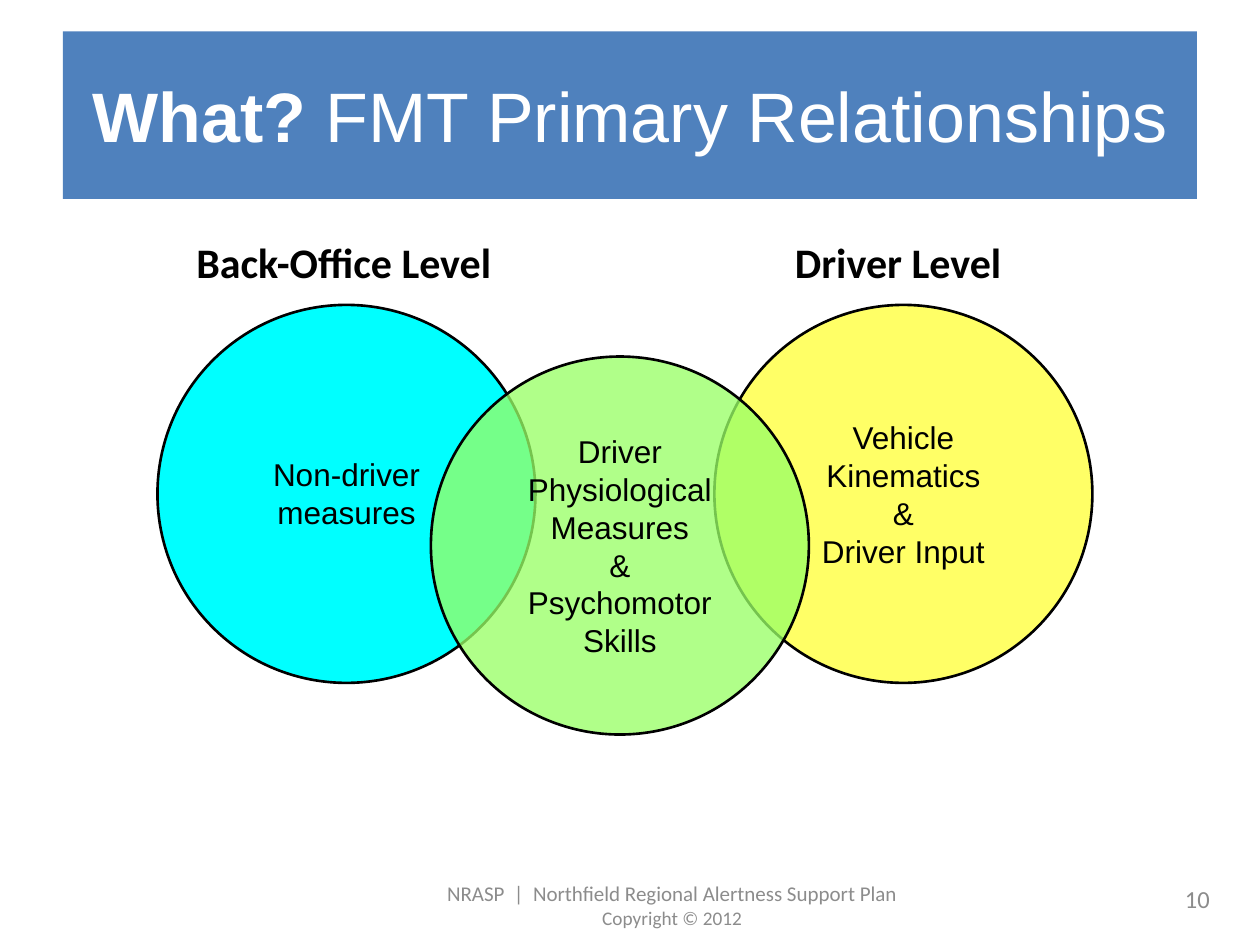
from dataclasses import dataclass

from lxml import etree
from pptx import Presentation
from pptx.dml.color import RGBColor
from pptx.enum.shapes import MSO_SHAPE
from pptx.enum.text import MSO_ANCHOR, PP_ALIGN
from pptx.oxml.ns import qn
from pptx.util import Inches, Pt

RECTANGLE = MSO_SHAPE.RECTANGLE
CIRCLE = MSO_SHAPE.FLOWCHART_CONNECTOR
LEFT, CENTER, RIGHT = PP_ALIGN.LEFT, PP_ALIGN.CENTER, PP_ALIGN.RIGHT
TOP, MIDDLE = MSO_ANCHOR.TOP, MSO_ANCHOR.MIDDLE


@dataclass(frozen=True)
class Theme:
    heading_font: str = "Arial"
    body_font: str = "Calibri"
    banner: str = "4F81BD"
    white: str = "FFFFFF"
    black: str = "000000"
    gray: str = "8C8C8C"
    cyan: str = "00FFFF"
    yellow: str = "FFFF66"
    green: str = "99FF66"
    title_size: int = 40
    label_size: int = 24
    circle_size: int = 18
    number_size: int = 14
    footer_size: int = 12
    copyright_size: int = 11


THEME = Theme()
CIRCLE_DIAMETER = 3


def format_run(run, font, size, color, bold=False):
    run.font.name = font
    run.font.size = Pt(size)
    run.font.bold = bold
    run.font.color.rgb = RGBColor.from_string(color)


def set_text(shape, text, font, size, color, align=CENTER, anchor=MIDDLE, bold=False):
    text_frame = shape.text_frame
    text_frame.word_wrap = True
    text_frame.vertical_anchor = anchor
    text_frame.text = text
    for paragraph in text_frame.paragraphs:
        paragraph.alignment = align
        for run in paragraph.runs:
            format_run(run, font, size, color, bold)


def add_text(slide, box, text, font, size, color, **options):
    shape = slide.shapes.add_textbox(*map(Inches, box))
    set_text(shape, text, font, size, color, **options)
    return shape


def add_filled_shape(slide, kind, box, color):
    shape = slide.shapes.add_shape(kind, *map(Inches, box))
    shape.shadow.inherit = False
    shape.fill.solid()
    shape.fill.fore_color.rgb = RGBColor.from_string(color)
    shape.line.fill.background()
    return shape


def add_circle(slide, left, top, color, text="", opacity=100):
    box = (left, top, CIRCLE_DIAMETER, CIRCLE_DIAMETER)
    shape = add_filled_shape(slide, CIRCLE, box, color)
    shape.line.color.rgb = RGBColor.from_string(THEME.black)
    shape.line.width = Pt(1.5)
    if opacity < 100:
        fill_color = shape.fill._xPr.find(qn("a:solidFill"))[0]
        etree.SubElement(fill_color, qn("a:alpha"), val=str(opacity * 1000))
    if text:
        set_text(shape, text, THEME.heading_font, THEME.circle_size, THEME.black)


def add_title(slide):
    add_filled_shape(slide, RECTANGLE, (0.5, 0.25, 9, 1.33), THEME.banner)
    title = add_text(slide, (0.5, 0.3, 9, 1.25), "What? ", THEME.heading_font,
                     THEME.title_size, THEME.white, bold=True)
    paragraph = title.text_frame.paragraphs[0]
    paragraph.line_spacing = Pt(45.8)
    run = paragraph.add_run()
    run.text = "FMT Primary Relationships"
    format_run(run, THEME.heading_font, THEME.title_size, THEME.white)


def add_label(slide, left, width, text):
    add_text(slide, (left, 1.83, width, 0.5), text, THEME.body_font,
             THEME.label_size, THEME.black, align=LEFT, anchor=TOP, bold=True)


def add_footer(slide):
    footer = add_text(slide, (3, 6.99, 4.67, 0.38),
                      "NRASP  |  Northfield Regional Alertness Support Plan\nCopyright © 2012",
                      THEME.body_font, THEME.footer_size, THEME.gray)
    footer.text_frame.paragraphs[1].runs[0].font.size = Pt(THEME.copyright_size)
    add_text(slide, (7.37, 6.93, 2.33, 0.4), "10", THEME.body_font,
             THEME.number_size, THEME.gray, align=RIGHT)


def main():
    presentation = Presentation()
    presentation.slide_width = Inches(10)
    presentation.slide_height = Inches(7.5)
    slide = presentation.slides.add_slide(presentation.slide_layouts[6])

    add_footer(slide)
    add_title(slide)
    add_circle(slide, 1.25, 2.42, THEME.cyan)
    add_circle(slide, 5.67, 2.42, THEME.yellow, "Vehicle Kinematics\n&\nDriver Input")
    add_circle(slide, 3.42, 2.83, THEME.green,
               "Driver Physiological Measures\n&\nPsychomotor Skills", opacity=77)
    add_label(slide, 1.46, 2.58, "Back-Office Level")
    add_label(slide, 6.21, 1.92, "Driver Level")
    add_text(slide, (2.04, 3.56, 1.42, 0.71), "Non-driver measures",
             THEME.heading_font, THEME.circle_size, THEME.black, anchor=TOP)

    presentation.save("out.pptx")


if __name__ == "__main__":
    main()
